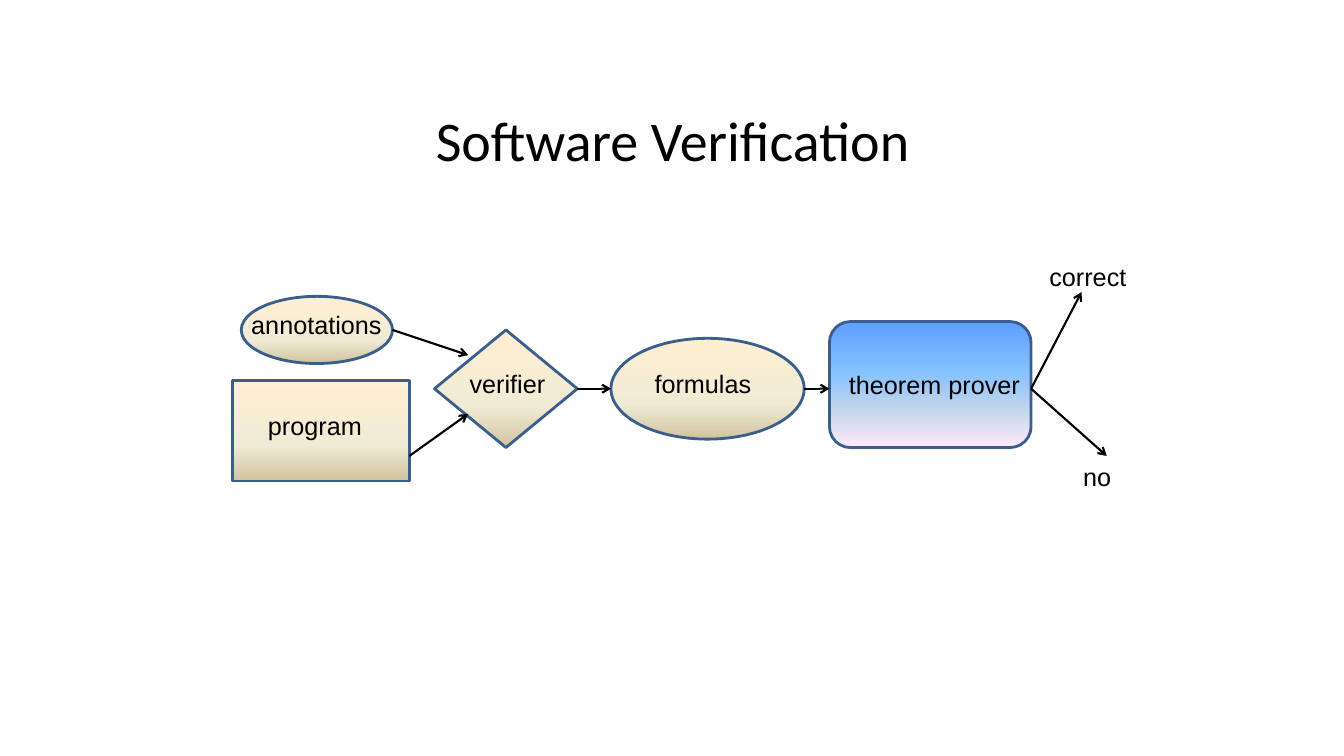
import pptx
import pptx.util
import pptx.dml.color
import pptx.enum.shapes
import pptx.enum.text
import pptx.oxml
import pptx.oxml.ns
from lxml import etree

SHAPE = pptx.enum.shapes.MSO_SHAPE
ALIGN = pptx.enum.text.PP_ALIGN
ANCHOR = pptx.enum.text.MSO_ANCHOR

THEME = {
    "ink": "000000",
    "outline": "3A5F8C",
    "sand": [(0, "FFEFD1"), (65, "F0EBD5"), (100, "D1C39F")],
    "sky": [(0, "5E9EFF"), (40, "85C2FF"), (70, "C4D6EB"), (100, "FFEBFA")],
    "title": ("Calibri", 40),
    "label": ("Arial", 18),
    "outline_pt": 2,
    "arrow_pt": 1.5,
}

TITLE = "Software Verification"
TITLE_BOX = (2.17, 0.76, 9, 1.25)

UNIT = 1 / 12
LEFT, TOP = 2.31, 2.94
LABEL_ROWS = 4.8
MID = 11

NODES = [
    (SHAPE.ROUNDED_RECTANGLE, "sky", 71, 3, 24, 15),
    (SHAPE.RECTANGLE, "sand", 0, 10, 21, 12),
    (SHAPE.OVAL, "sand", 45, 5, 23, 12),
    (SHAPE.DIAMOND, "sand", 24, 4, 17, 14),
    (SHAPE.OVAL, "sand", 1, 0, 18, 8),
]
ARROWS = [
    ((19, 4), (28, 7)),
    ((21, 19), (28, 14)),
    ((41, MID), (45, MID)),
    ((68, MID), (71, MID)),
    ((95, MID), (101, -0.5)),
    ((95, MID), (104, 19)),
]
LABELS = [
    ("annotations", 1, 1, 20, ALIGN.LEFT),
    ("program", 3, 13, 18, ALIGN.LEFT),
    ("verifier", 27, 8, 13, ALIGN.LEFT),
    ("formulas", 49, 8, 15, ALIGN.LEFT),
    ("theorem prover", 69, 8.1, 29, ALIGN.CENTER),
    ("correct", 96, -4.8, 12, ALIGN.LEFT),
    ("no", 100, 19, 7, ALIGN.LEFT),
]


def inch(*lengths):
    return [pptx.util.Inches(v) for v in lengths]


def rgb(code):
    return pptx.dml.color.RGBColor.from_string(code)


def spot(col, row):
    return inch(LEFT + col * UNIT, TOP + row * UNIT)


def size(cols, rows):
    return inch(cols * UNIT, rows * UNIT)


def sub(parent, tag, **attrs):
    return etree.SubElement(parent, pptx.oxml.ns.qn(tag), **attrs)


def add_text(s, box, text, style, align, anchor):
    tf = s.shapes.add_textbox(*box).text_frame
    tf.word_wrap = True
    tf.vertical_anchor = anchor
    p = tf.paragraphs[0]
    p.alignment = align
    r = p.add_run()
    r.text = text
    r.font.name, points = THEME[style]
    r.font.size = pptx.util.Pt(points)
    r.font.color.rgb = rgb(THEME["ink"])


def add_node(s, kind, fill, col, row, cols, rows):
    sp = s.shapes.add_shape(kind, *spot(col, row), *size(cols, rows))
    sp.shadow.inherit = False
    sp.line.color.rgb = rgb(THEME["outline"])
    sp.line.width = pptx.util.Pt(THEME["outline_pt"])
    sp.fill.gradient()
    grad = sp.fill._xPr.find(pptx.oxml.ns.qn("a:gradFill"))
    for child in list(grad):
        grad.remove(child)
    stops = sub(grad, "a:gsLst")
    for share, code in THEME[fill]:
        sub(sub(stops, "a:gs", pos=str(share * 1000)), "a:srgbClr", val=code)
    sub(grad, "a:lin", ang="5400000", scaled="0")


def add_arrow(s, start, end):
    straight = pptx.enum.shapes.MSO_CONNECTOR.STRAIGHT
    cx = s.shapes.add_connector(straight, *spot(*start), *spot(*end))
    cx.line.color.rgb = rgb(THEME["ink"])
    cx.line.width = pptx.util.Pt(THEME["arrow_pt"])
    sub(cx.line._get_or_add_ln(), "a:tailEnd", type="arrow")
    sub(cx._element.spPr, "a:effectLst")


def main():
    prs = pptx.Presentation()
    prs.slide_width, prs.slide_height = inch(13.33, 7.5)
    s = prs.slides.add_slide(prs.slide_layouts[6])
    add_text(s, inch(*TITLE_BOX), TITLE, "title", ALIGN.CENTER, ANCHOR.MIDDLE)
    for node in NODES:
        add_node(s, *node)
    for start, end in ARROWS:
        add_arrow(s, start, end)
    for text, col, row, cols, align in LABELS:
        box = spot(col, row) + size(cols, LABEL_ROWS)
        add_text(s, box, text, "label", align, ANCHOR.TOP)
    prs.save("out.pptx")


if __name__ == "__main__":
    main()
